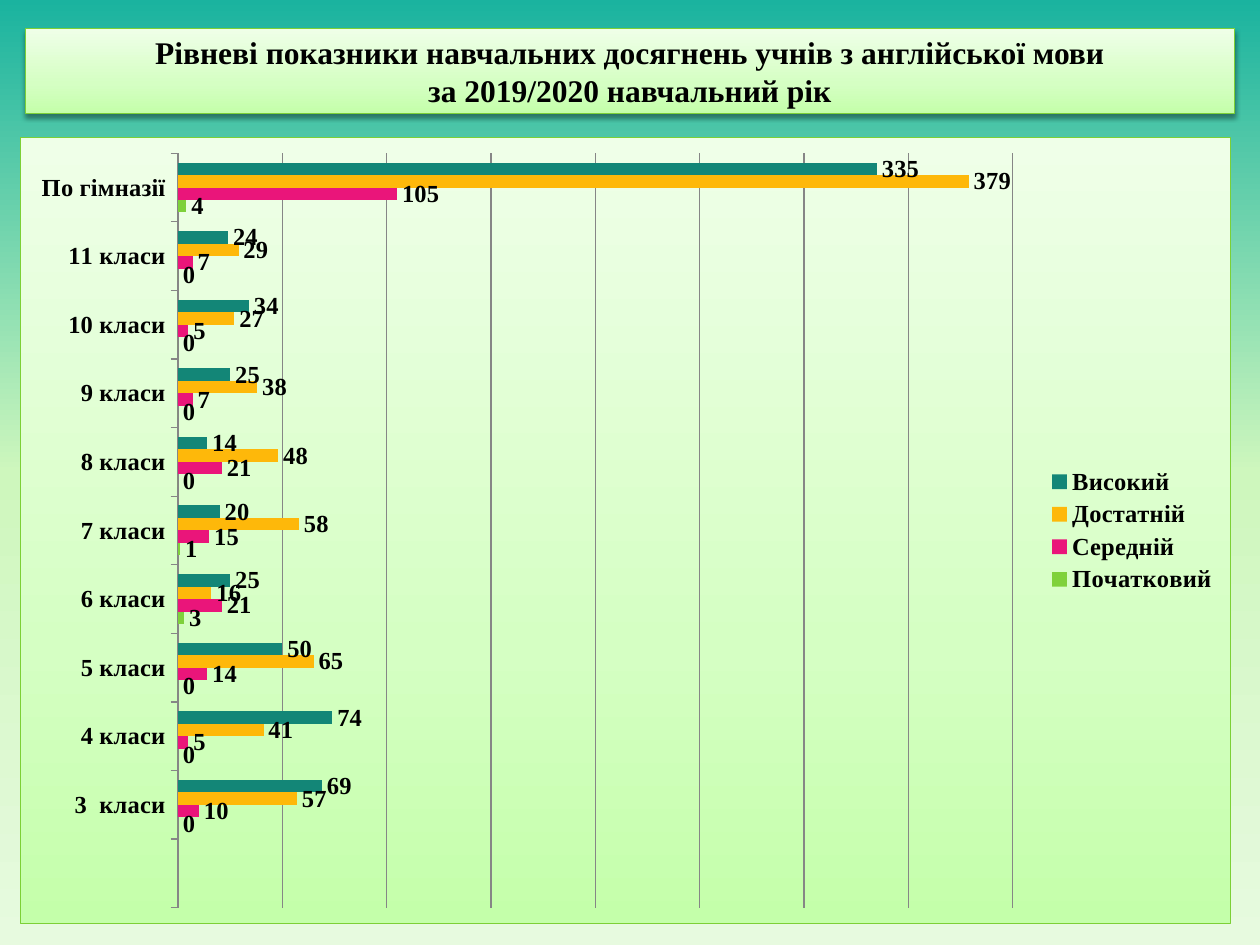
"""Builds a slide with a bar chart of pupils' achievement levels by grade."""
from dataclasses import dataclass

from lxml.etree import SubElement
from pptx import Presentation
from pptx.chart.data import CategoryChartData as ChartData
from pptx.dml.color import RGBColor as Rgb
from pptx.enum.chart import XL_CHART_TYPE as ChartType
from pptx.enum.chart import XL_LABEL_POSITION as LabelPosition
from pptx.enum.chart import XL_LEGEND_POSITION as LegendPosition
from pptx.enum.chart import XL_TICK_LABEL_POSITION as TickLabelPosition
from pptx.enum.chart import XL_TICK_MARK as TickMark
from pptx.enum.shapes import MSO_SHAPE as ShapeType
from pptx.enum.text import MSO_ANCHOR as Anchor
from pptx.enum.text import PP_ALIGN as Align
from pptx.oxml import parse_xml
from pptx.oxml.ns import nsdecls, qn
from pptx.util import Inches, Pt


@dataclass(frozen=True)
class Theme:
    """Colours, gradients and type sizes of the slide."""
    font: str = "Times New Roman"
    title_size: int = 18
    chart_size: int = 14
    text: str = "000000"
    border: str = "7CD036"
    grid: str = "868686"
    line_width: float = 0.75
    backdrop: tuple = ((0, "1AB39F"), (50, "CEF7BD"), (100, "E7FADF"))
    panel: tuple = ((0, "C4FFAA"), (35, "D5FFC3"), (100, "EFFFE8"))


THEME = Theme()
WIDTH, HEIGHT = Inches(10), Inches(7.5)
TITLE = "Рівневі показники навчальних досягнень учнів з англійської мови\vза 2019/2020 навчальний рік"
CATEGORIES = ["", "3  класи", *(f"{grade} класи" for grade in range(4, 12)), "По гімназії"]
LEVELS = (
    ("Початковий", "7FD13B", (None, 0, 0, 0, 3, 1, 0, 0, 0, 0, 4)),
    ("Середній", "EA157A", (None, 10, 5, 14, 21, 15, 21, 7, 5, 7, 105)),
    ("Достатній", "FEB80A", (None, 57, 41, 65, 16, 58, 48, 38, 27, 29, 379)),
    ("Високий", "138677", (None, 69, 74, 50, 25, 20, 14, 25, 34, 24, 335)),
)


def share_box(left, top, width, height):
    """Turn shares of the slide's size into lengths."""
    return (int(left * WIDTH), int(top * HEIGHT), int(width * WIDTH), int(height * HEIGHT))


def gradient(stops, angle):
    """Return a linear gradient fill element."""
    marks = "".join(
        f'<a:gs pos="{position * 1000}"><a:srgbClr val="{color}"/></a:gs>' for position, color in stops
    )
    return parse_xml(
        f'<a:gradFill {nsdecls("a")} rotWithShape="1"><a:gsLst>{marks}</a:gsLst>'
        f'<a:lin ang="{angle * 60000}" scaled="0"/></a:gradFill>'
    )


def swap_solid_fill(properties, stops, angle):
    """Replace the solid fill of a properties element with a gradient."""
    properties.replace(properties.find(qn("a:solidFill")), gradient(stops, angle))


def style_font(font, size):
    """Apply the bold slide typeface at the given size."""
    font.name, font.size, font.bold = THEME.font, Pt(size), True
    font.color.rgb = Rgb.from_string(THEME.text)


def style_line(line, color):
    """Set the colour and standard width of a line."""
    line.color.rgb = Rgb.from_string(color)
    line.width = Pt(THEME.line_width)


def paint_background(slide):
    """Fill the slide background with the vertical gradient."""
    slide.background.fill.solid()
    swap_solid_fill(slide.element.find(f".//{qn('p:bgPr')}"), THEME.backdrop, 90)


def add_shadow(shape):
    """Give the shape a soft shadow below it."""
    shape.shadow.inherit = False
    effects = shape.element.spPr.find(qn("a:effectLst"))
    shadow = SubElement(effects, qn("a:outerShdw"), blurRad=str(Pt(3.1)), dist=str(Pt(1.6)),
                        dir="5400000", rotWithShape="0")
    color = SubElement(shadow, qn("a:srgbClr"), val="000000")
    SubElement(color, qn("a:alpha"), val="38000")


def add_title(slide, text, box):
    """Add the title banner."""
    shape = slide.shapes.add_shape(ShapeType.RECTANGLE, *box)
    shape.fill.solid()
    swap_solid_fill(shape.element.spPr, THEME.panel, 270)
    style_line(shape.line, THEME.border)
    add_shadow(shape)
    frame = shape.text_frame
    frame.word_wrap, frame.vertical_anchor = True, Anchor.MIDDLE
    paragraph = frame.paragraphs[0]
    paragraph.text, paragraph.alignment = text, Align.CENTER
    for run in paragraph.runs:
        style_font(run.font, THEME.title_size)


def style_chart_area(chart):
    """Give the chart area its gradient and border."""
    properties = parse_xml(
        f'<c:spPr {nsdecls("c", "a")}><a:ln w="{Pt(THEME.line_width)}"><a:solidFill>'
        f'<a:srgbClr val="{THEME.border}"/></a:solidFill></a:ln></c:spPr>'
    )
    properties.insert(0, gradient(THEME.panel, 270))
    chart.element.find(qn("c:chart")).addnext(properties)


def place_plot(chart, **shares):
    """Fix the inner plot area at shares of the chart's size."""
    area = chart.element.find(f".//{qn('c:plotArea')}")
    for old in area.findall(qn("c:layout")):
        area.remove(old)
    values = "".join(f'<c:{key} val="{value}"/>' for key, value in shares.items())
    area.insert(0, parse_xml(
        f'<c:layout {nsdecls("c")}><c:manualLayout><c:layoutTarget val="inner"/>'
        f'<c:xMode val="edge"/><c:yMode val="edge"/>{values}</c:manualLayout></c:layout>'
    ))


def style_axes(chart):
    """Show category names and plain grid lines, and hide the value axis."""
    category, value = chart.category_axis, chart.value_axis
    category.major_tick_mark = TickMark.OUTSIDE
    category.tick_label_position = TickLabelPosition.LOW
    style_font(category.tick_labels.font, THEME.chart_size)
    style_line(category.format.line, THEME.grid)
    value.minimum_scale, value.maximum_scale, value.major_unit = 0, 400, 50
    value.has_major_gridlines = True
    style_line(value.major_gridlines.format.line, THEME.grid)
    value.visible = False


def style_series(series, color):
    """Colour one level's bars and label their values."""
    series.format.fill.solid()
    series.format.fill.fore_color.rgb = Rgb.from_string(color)
    series.invert_if_negative = False
    labels = series.data_labels
    labels.show_value, labels.position = True, LabelPosition.OUTSIDE_END
    style_font(labels.font, THEME.chart_size)


def add_level_chart(slide, box):
    """Add the bar chart of achievement levels."""
    data = ChartData()
    data.categories = CATEGORIES
    for name, _, values in LEVELS:
        data.add_series(name, values)
    chart = slide.shapes.add_chart(ChartType.BAR_CLUSTERED, *box, data).chart
    chart.has_title = False
    style_font(chart.font, THEME.chart_size)
    style_chart_area(chart)
    place_plot(chart, x=0.13, y=0.02, w=0.69, h=0.96)
    style_axes(chart)
    plot = chart.plots[0]
    plot.gap_width, plot.overlap, plot.vary_by_categories = 150, 0, False
    for series, (_, color, _) in zip(plot.series, LEVELS):
        style_series(series, color)
    chart.has_legend = True
    chart.legend.position = LegendPosition.RIGHT
    chart.legend.include_in_layout = False
    style_font(chart.legend.font, THEME.chart_size)


def main():
    """Build and save the slide."""
    presentation = Presentation()
    presentation.slide_width, presentation.slide_height = WIDTH, HEIGHT
    slide = presentation.slides.add_slide(presentation.slide_layouts[6])
    paint_background(slide)
    add_title(slide, TITLE, share_box(0.02, 0.03, 0.96, 0.09))
    add_level_chart(slide, share_box(0.016, 0.145, 0.961, 0.833))
    presentation.save("out.pptx")


if __name__ == "__main__":
    main()
